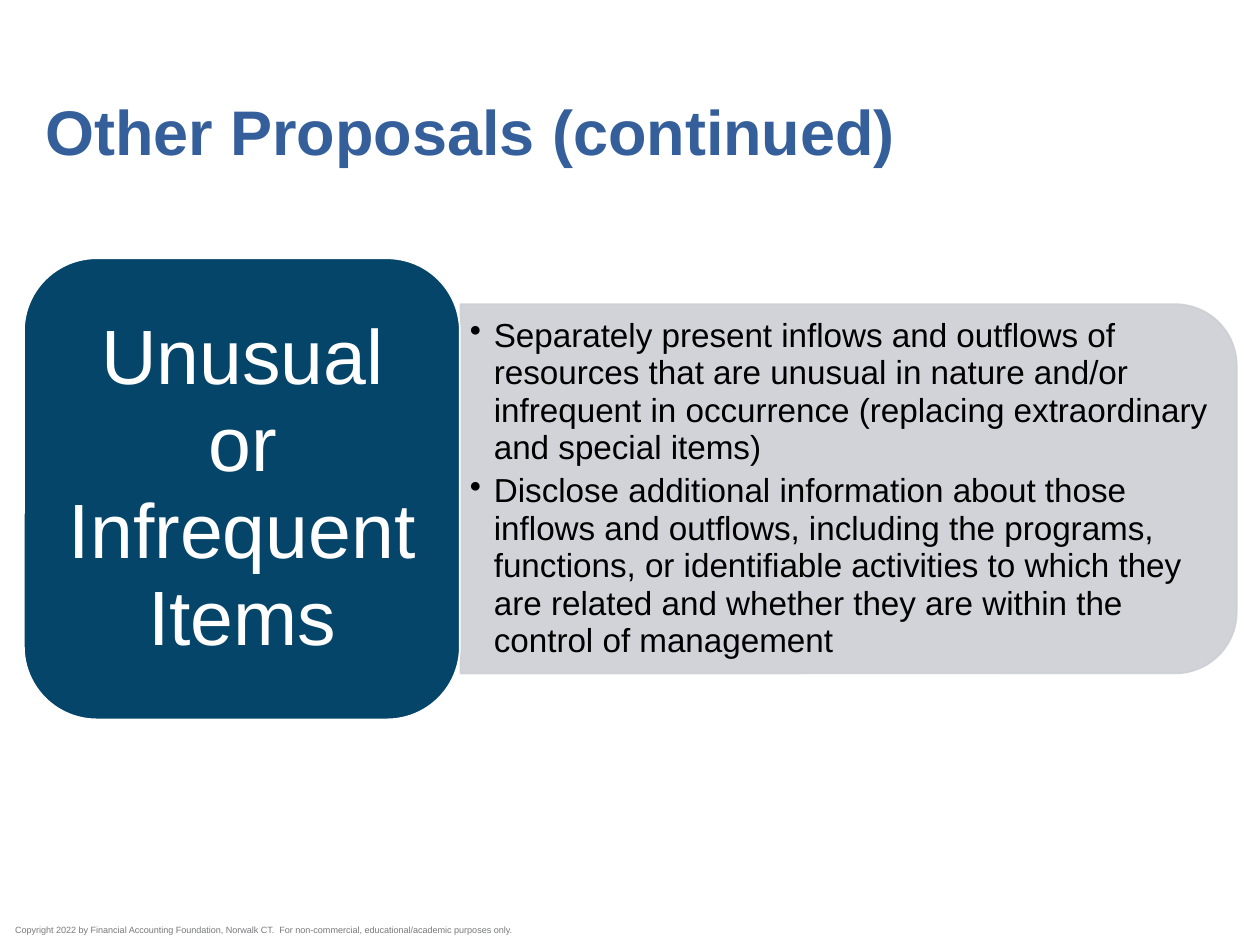
from dataclasses import dataclass

from lxml import etree
from pptx import Presentation
from pptx.dml.color import RGBColor
from pptx.enum.shapes import MSO_SHAPE
from pptx.enum.text import MSO_ANCHOR, PP_ALIGN
from pptx.oxml.ns import qn
from pptx.util import Inches, Pt

ROUNDED = MSO_SHAPE.ROUNDED_RECTANGLE
ROUNDED_END = MSO_SHAPE.ROUND_2_SAME_RECTANGLE
TOP, MIDDLE = MSO_ANCHOR.TOP, MSO_ANCHOR.MIDDLE
LEFT, CENTER = PP_ALIGN.LEFT, PP_ALIGN.CENTER
FONT = "Arial"


@dataclass
class Box:
    left: float
    top: float
    width: float
    height: float

    def lengths(self):
        return [Inches(v) for v in (self.left, self.top, self.width, self.height)]


@dataclass
class TextStyle:
    size: float
    color: str
    bold: bool = False
    align: PP_ALIGN = LEFT
    anchor: MSO_ANCHOR = MIDDLE
    inset_x: float = 0
    inset_y: float = 0
    line_spacing: float | Pt = 1.0
    space_after: float = 0
    bullet_indent: float = 0


def rgb(color: str) -> RGBColor:
    return RGBColor.from_string(color)


def add_panel(slide, kind, box: Box, fill: str, line: str,
              rotation: float = 0, opacity: int = 100) -> None:
    panel = slide.shapes.add_shape(kind, *box.lengths())
    panel.rotation = rotation
    panel.shadow.inherit = False
    panel.fill.solid()
    panel.fill.fore_color.rgb = rgb(fill)
    panel.line.color.rgb = rgb(line)
    panel.line.width = Pt(1)
    if opacity < 100:
        for color in panel._element.spPr.iter(qn("a:srgbClr")):
            etree.SubElement(color, qn("a:alpha"), val=str(opacity * 1000))


def add_bullet(paragraph, indent: float) -> None:
    properties = paragraph._p.get_or_add_pPr()
    properties.set("marL", str(Inches(indent)))
    properties.set("indent", str(-Inches(indent)))
    etree.SubElement(properties, qn("a:buChar"), char="•")


def add_text(slide, box: Box, lines: list[str], style: TextStyle) -> None:
    frame = slide.shapes.add_textbox(*box.lengths()).text_frame
    frame.word_wrap = True
    frame.vertical_anchor = style.anchor
    frame.margin_left = frame.margin_right = Inches(style.inset_x)
    frame.margin_top = frame.margin_bottom = Inches(style.inset_y)
    frame.text = "\n".join(lines)
    for paragraph in frame.paragraphs:
        paragraph.alignment = style.align
        paragraph.line_spacing = style.line_spacing
        paragraph.space_after = Pt(style.space_after)
        if style.bullet_indent:
            add_bullet(paragraph, style.bullet_indent)
        for run in paragraph.runs:
            run.font.name = FONT
            run.font.size = Pt(style.size)
            run.font.bold = style.bold
            run.font.color.rgb = rgb(style.color)


def main() -> None:
    deck = Presentation()
    deck.slide_width, deck.slide_height = Inches(10), Inches(7.5)
    slide = deck.slides.add_slide(deck.slide_layouts[6])

    # Copyright line
    add_text(slide, Box(0.12, 7.34, 5.43, 0.14),
             ["Copyright 2022 by Financial Accounting Foundation, Norwalk CT.  "
              "For non-commercial, educational/academic purposes only."],
             TextStyle(5.2, "78797B", anchor=TOP))

    # Title
    add_text(slide, Box(0.26, 0.59, 9.74, 0.98), ["Other Proposals (continued)"],
             TextStyle(36, "355F9A", bold=True, inset_x=0.1, inset_y=0.05,
                       line_spacing=Pt(37)))

    # Proposal details, on a panel turned so its round corners face right
    add_panel(slide, ROUNDED_END, Box(5.27, 0.8, 2.93, 6.16), "CCCFD4", "CCCFD4",
              rotation=90, opacity=90)
    add_text(slide, Box(3.65, 2.56, 6.04, 2.64),
             ["Separately present inflows and outflows of resources that are unusual "
              "in nature and/or infrequent in occurrence (replacing extraordinary "
              "and special items)",
              "Disclose additional information about those inflows and outflows, "
              "including the programs, functions, or identifiable activities to which "
              "they are related and whether they are within the control of management"],
             TextStyle(19, "000000", inset_x=0.08, inset_y=0.04, line_spacing=0.94,
                       space_after=3, bullet_indent=0.19))

    # Proposal name
    add_panel(slide, ROUNDED, Box(0.19, 2.05, 3.46, 3.66), "054569", "FFFFFF")
    add_text(slide, Box(0.36, 2.22, 3.13, 3.32), ["Unusual or Infrequent Items"],
             TextStyle(44, "FFFFFF", align=CENTER, inset_x=0.18, inset_y=0.09,
                       line_spacing=0.94))

    deck.save("out.pptx")


if __name__ == "__main__":
    main()
